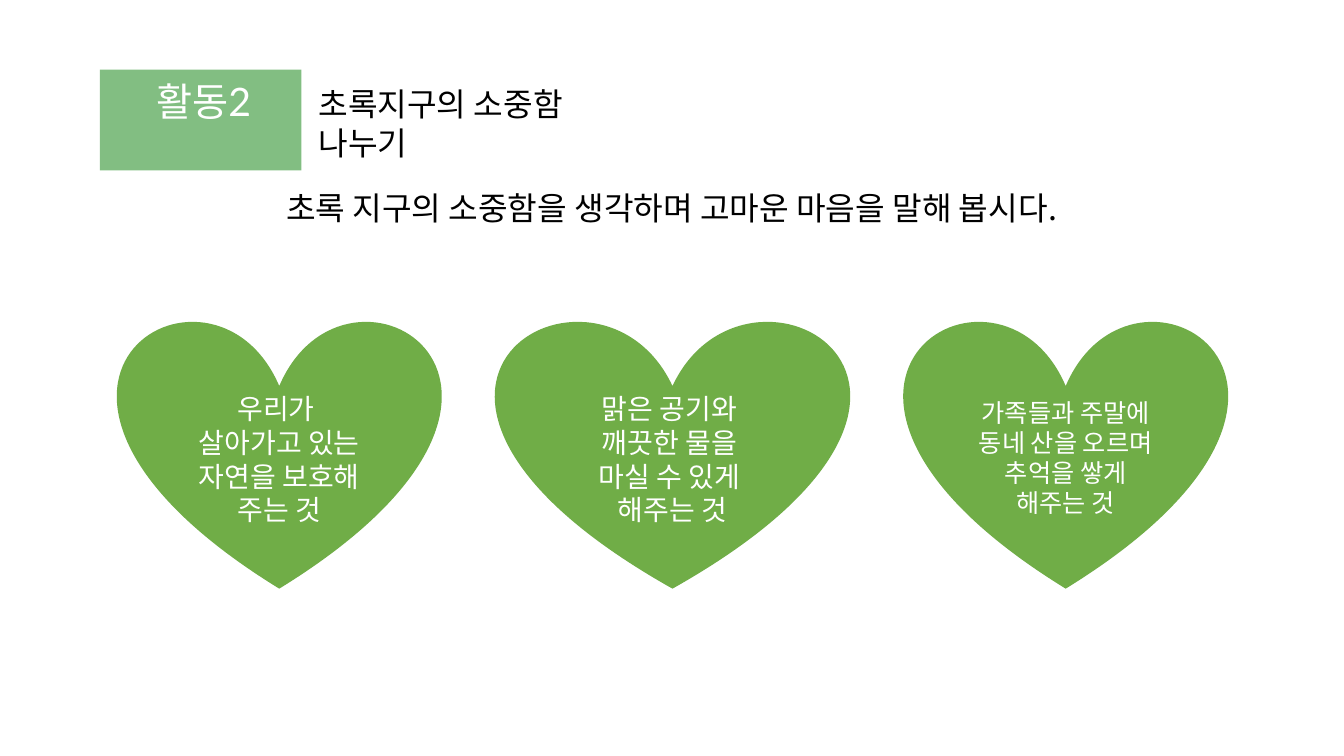
from pptx import Presentation
from pptx.dml.color import RGBColor
from pptx.enum.shapes import MSO_SHAPE as Shape
from pptx.enum.text import MSO_ANCHOR as Anchor, PP_ALIGN as Align
from pptx.util import Inches, Pt

WHITE = RGBColor(0xFF, 0xFF, 0xFF)
BLACK = RGBColor(0x00, 0x00, 0x00)
TAB_GREEN = RGBColor(0x82, 0xBE, 0x82)
HEART_GREEN = RGBColor(0x70, 0xAD, 0x47)
LATIN_FONT = "Lato"
KOREAN_FONT = "Noto Sans CJK KR"
LINE_HEIGHT = 1.2 / 72
HEARTS = [
    (1.17, 3.2, 20, ["우리가 ", "살아가고 있는 자연을 보호해 주는 것"]),
    (4.92, 3.5, 20, ["맑은 공기와 ", "깨끗한 물을 ", "마실 수 있게 ", "해주는 것"]),
    (8.97, 3.2, 18, ["가족들과 주말에 동네 산을 오르며 추억을 쌓게 해주는 것"]),
]


def write_lines(frame, lines, size, font_name, color, align):
    """Fill a text frame with one paragraph per line."""
    frame.word_wrap = True
    for index, line in enumerate(lines):
        paragraph = frame.paragraphs[0] if index == 0 else frame.add_paragraph()
        paragraph.alignment = align
        run = paragraph.add_run()
        run.text = line
        run.font.size = Pt(size)
        run.font.name = font_name
        run.font.color.rgb = color


def add_text(shapes, box, line, size, font_name, color, align=Align.LEFT):
    """Add a one-paragraph text box."""
    text_box = shapes.add_textbox(*map(Inches, box))
    write_lines(text_box.text_frame, [line], size, font_name, color, align)


def paint(shape, color):
    """Give a shape a plain fill without line or shadow."""
    shape.fill.solid()
    shape.fill.fore_color.rgb = color
    shape.line.fill.background()
    shape.shadow.inherit = False


def curve(start, first, second, end, steps=16):
    """Return points along a cubic curve, without its start."""
    points = []
    for step in range(1, steps + 1):
        t = step / steps
        weights = ((1 - t) ** 3, 3 * t * (1 - t) ** 2, 3 * t * t * (1 - t), t ** 3)
        corners = (start, first, second, end)
        points.append(tuple(sum(w * c[axis] for w, c in zip(weights, corners))
                            for axis in (0, 1)))
    return points


def add_activity_tab(slide, left, top, width, height):
    """Add the curved activity tab with its label."""
    right, bottom = width, height
    outline = [(right, 0), (right, 0.31)]
    outline += curve((right, 0.31), (right, 0.48), (1.76, bottom), (1.63, bottom))
    outline += [(0.43, bottom)]
    outline += curve((0.43, bottom), (0.33, bottom), (0.25, 0.54), (0.21, 0.43))
    outline += [(0.19, 0.3)]
    outline += curve((0.19, 0.3), (0.18, 0.16), (0.11, 0.04), (0, 0))
    group = slide.shapes.add_group_shape()
    builder = group.shapes.build_freeform(0, 0, scale=Inches(1))
    builder.add_line_segments(outline, close=True)
    paint(builder.convert_to_shape(Inches(left), Inches(top)), TAB_GREEN)
    add_text(group.shapes, (left + 0.43, top + 0.03, 1.2, 0.57),
             "활동2", 28, LATIN_FONT, WHITE, Align.CENTER)


def add_headings(slide, left, top):
    """Add the activity title and the task sentence."""
    add_text(slide.shapes, (left, top, 3.47, 0.49),
             "초록지구의 소중함 나누기", 23, LATIN_FONT, BLACK)
    add_text(slide.shapes, (left - 0.58, top + 1.03, 8.37, 0.49),
             "초록 지구의 소중함을 생각하며 고마운 마음을 말해 봅시다.",
             23, KOREAN_FONT, BLACK, Align.CENTER)


def add_heart(slide, left, top, width, height, size, lines):
    """Add a heart whose text sits one line below its middle inset."""
    heart = slide.shapes.add_shape(Shape.HEART, *map(Inches, (left, top, width, height)))
    paint(heart, HEART_GREEN)
    frame = heart.text_frame
    frame.vertical_anchor = Anchor.MIDDLE
    frame.margin_top = Inches(0.05 + size * LINE_HEIGHT)
    write_lines(frame, lines, size, KOREAN_FONT, WHITE, Align.CENTER)


def main():
    """Build and save the slide."""
    presentation = Presentation()
    presentation.slide_width = Inches(13.33)
    presentation.slide_height = Inches(7.5)
    slide = presentation.slides.add_slide(presentation.slide_layouts[6])
    add_activity_tab(slide, 0.99, 0.69, 1.87, 0.61)
    add_headings(slide, 3.06, 0.79)
    for left, width, size, lines in HEARTS:
        add_heart(slide, left, 3.16, width, 2.68, size, lines)
    presentation.save("out.pptx")


if __name__ == "__main__":
    main()
